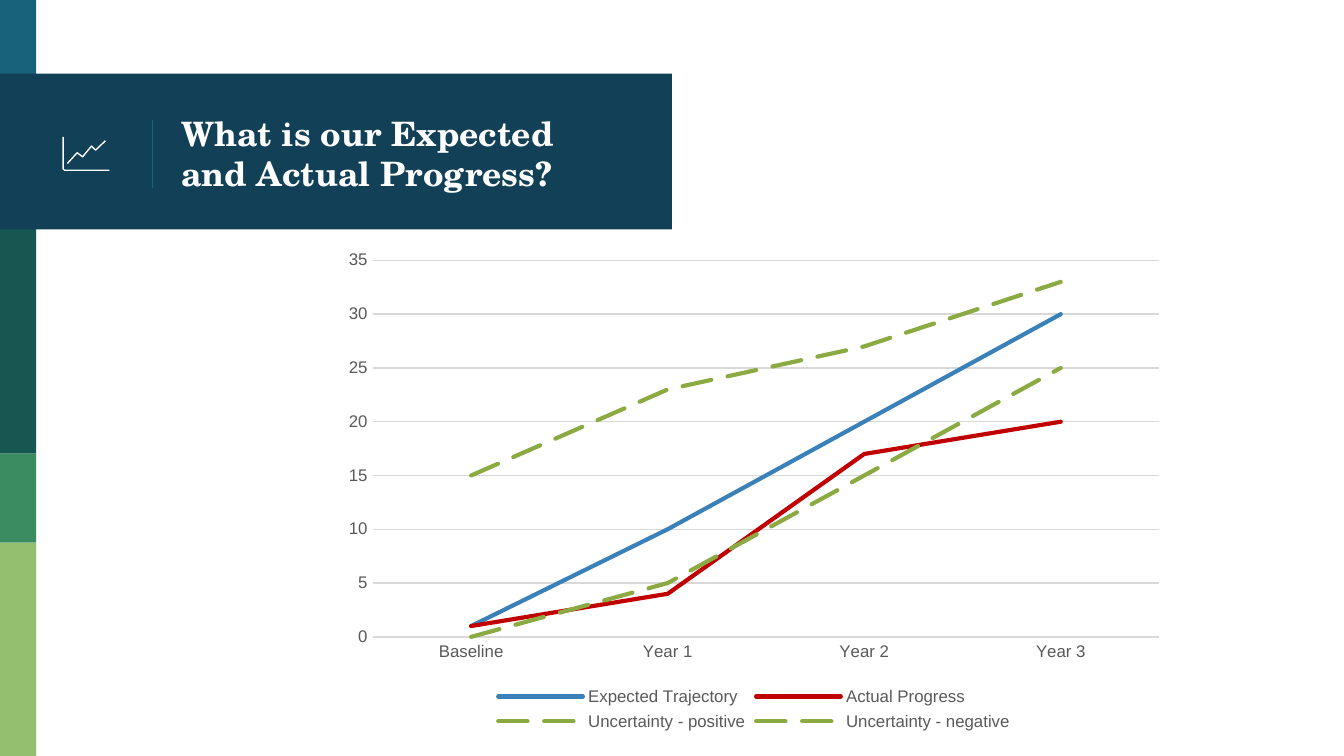
from dataclasses import dataclass

from lxml import etree
from pptx import Presentation
from pptx import util as u
from pptx.chart.data import CategoryChartData
from pptx.dml.color import RGBColor
from pptx.enum import chart as ch, dml, shapes, text
from pptx.oxml.ns import qn

W = 10
H = W * 9 / 16


@dataclass(frozen=True)
class Theme:
    teal: str = "18637B"
    navy: str = "124057"
    pine: str = "165751"
    green: str = "3B8D61"
    lime: str = "94BF6E"
    white: str = "FFFFFF"
    grid: str = "D9D9D9"
    label: str = "595959"
    expected: str = "3A81BA"
    actual: str = "C00000"
    uncertain: str = "8BAB42"
    title_font: str = "TeX Gyre Schola"
    body_font: str = "Arial"
    title_size: float = 18
    label_size: float = 9
    hairline: float = 0.75
    series_line: float = 2.25


T = Theme()


def rgb(color):
    return RGBColor.from_string(color)


def inside(box, left, top, width, height):
    """Box at the given percentages of another box."""
    x, y, w, h = box
    return (x + left * w / 100, y + top * h / 100,
            width * w / 100, height * h / 100)


def set_line(line, color, width):
    line.color.rgb = rgb(color)
    line.width = u.Pt(width)


def set_label_font(font):
    font.name, font.size = T.body_font, u.Pt(T.label_size)
    font.color.rgb = rgb(T.label)


def add_block(s, box, color):
    sp = s.shapes.add_shape(shapes.MSO_SHAPE.RECTANGLE, *map(u.Inches, box))
    sp.shadow.inherit = False
    sp.fill.solid()
    sp.fill.fore_color.rgb = rgb(color)
    sp.line.fill.background()


def add_sidebar(s, box):
    """Colour bands down the box: top and bottom in percent, colour."""
    bands = [(0, 10.3, T.teal), (30.2, 60, T.pine),
             (60, 71.8, T.green), (71.8, 100, T.lime)]
    for top, bottom, color in bands:
        add_block(s, inside(box, 0, top, 100, bottom - top), color)


def add_icon(s, box):
    """Line-chart icon: an axis corner and a zigzag, as shares of the box."""
    x, y, w, h = box
    axes = [(0, 0), (0, 0.96), (0.03, 1), (1, 1)]
    zigzag = [(0.09, 0.8), (0.3, 0.48), (0.42, 0.6),
              (0.61, 0.28), (0.7, 0.4), (0.91, 0.12)]
    for shares in (axes, zigzag):
        pts = [(u.Inches(x + a * w), u.Inches(y + b * h)) for a, b in shares]
        fb = s.shapes.build_freeform(*pts[0])
        fb.add_line_segments(pts[1:], close=False)
        sp = fb.convert_to_shape()
        sp.shadow.inherit = False
        sp.fill.background()
        set_line(sp.line, T.white, T.hairline)


def add_banner(s, box, title):
    add_block(s, box, T.navy)

    # Divider between icon and title
    x, y, _, h = inside(box, 22.7, 29.5, 0, 44)
    cx = s.shapes.add_connector(shapes.MSO_CONNECTOR.STRAIGHT,
                                *map(u.Inches, (x, y, x, y + h)))
    set_line(cx.line, T.teal, T.hairline)
    etree.SubElement(cx._element.spPr, qn("a:effectLst"))

    # Title
    tb = s.shapes.add_textbox(*map(u.Inches, inside(box, 25, 2.6, 70.2, 96.5)))
    tf = tb.text_frame
    tf.word_wrap = True
    tf.vertical_anchor = text.MSO_ANCHOR.MIDDLE
    tf.margin_left = tf.margin_right = u.Inches(0.1)
    tf.margin_top = tf.margin_bottom = u.Inches(0.1)
    r = tf.paragraphs[0].add_run()
    r.text = title
    r.font.name, r.font.size = T.title_font, u.Pt(T.title_size)
    r.font.bold = True
    r.font.color.rgb = rgb(T.white)

    add_icon(s, inside(box, 9.4, 40.5, 6.9, 21.5))


def add_progress_chart(s, box):
    series = [
        ("Expected Trajectory", (1, 10, 20, 30), T.expected, False),
        ("Actual Progress", (1, 4, 17, 20), T.actual, False),
        ("Uncertainty - positive", (15, 23, 27, 33), T.uncertain, True),
        ("Uncertainty - negative", (0, 5, 15, 25), T.uncertain, True),
    ]
    data = CategoryChartData()
    data.categories = ["Baseline", "Year 1", "Year 2", "Year 3"]
    for name, values, _, _ in series:
        data.add_series(name, values)
    chart = s.shapes.add_chart(
        ch.XL_CHART_TYPE.LINE, *map(u.Inches, box), data).chart
    set_label_font(chart.font)
    chart.has_title = False

    # Series lines with round caps
    plot = chart.plots[0]
    plot.vary_by_categories = False
    for ser, (_, _, color, dashed) in zip(plot.series, series):
        ser.smooth = False
        ser.marker.style = ch.XL_MARKER_STYLE.NONE
        set_line(ser.format.line, color, T.series_line)
        if dashed:
            ser.format.line.dash_style = dml.MSO_LINE.LONG_DASH
        ser._element.spPr.find(qn("a:ln")).set("cap", "rnd")

    # Axes and gridlines
    for axis in (chart.category_axis, chart.value_axis):
        axis.major_tick_mark = axis.minor_tick_mark = ch.XL_TICK_MARK.NONE
        set_label_font(axis.tick_labels.font)
    set_line(chart.category_axis.format.line, T.grid, T.hairline)
    va = chart.value_axis
    va.format.line.fill.background()
    va.has_major_gridlines = True
    set_line(va.major_gridlines.format.line, T.grid, T.hairline)

    # Legend
    chart.has_legend = True
    chart.legend.position = ch.XL_LEGEND_POSITION.BOTTOM
    chart.legend.include_in_layout = False
    set_label_font(chart.legend.font)


def main():
    prs = Presentation()
    prs.slide_width, prs.slide_height = u.Inches(W), u.Inches(H)
    s = prs.slides.add_slide(prs.slide_layouts[6])
    page = (0, 0, W, H)
    add_sidebar(s, inside(page, 0, 0, 2.7, 100))
    add_banner(s, inside(page, 0, 9.75, 50, 20.6),
               "What is our Expected and Actual Progress?")
    add_progress_chart(s, inside(page, 24.7, 31.84, 62.8, 65.6))
    prs.save("out.pptx")


if __name__ == "__main__":
    main()
